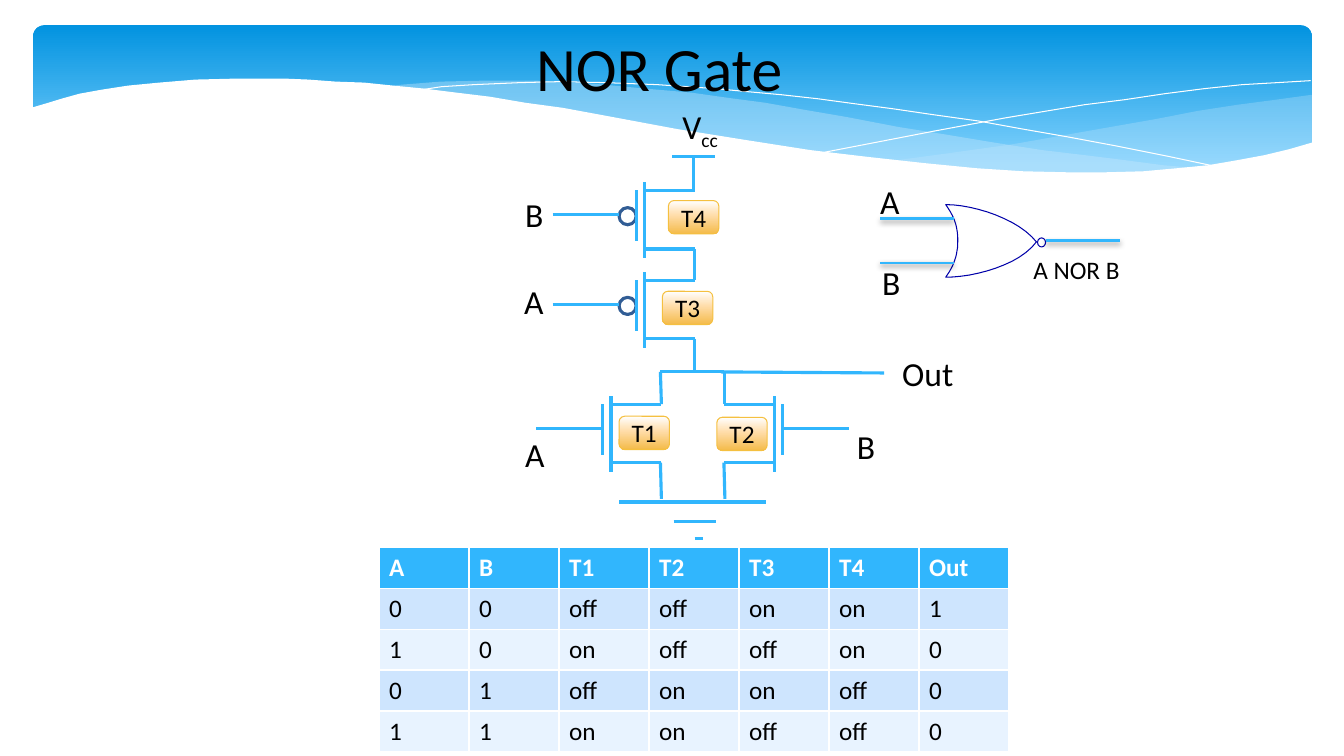
from copy import deepcopy
from itertools import product
from lxml.etree import SubElement
from pptx import Presentation
from pptx.dml.color import RGBColor
from pptx.enum.shapes import MSO_CONNECTOR, MSO_SHAPE
from pptx.enum.text import MSO_ANCHOR, MSO_AUTO_SIZE, PP_ALIGN
from pptx.oxml.ns import qn
from pptx.util import Inches, Pt

G = Inches(0.01)
C = {k: RGBColor.from_string(v) for k, v in {
    "ink": "000000", "white": "FFFFFF", "wire": "31B6FD", "bubble": "315D95",
    "gate": "0000A9", "sky": "0293E0", "pale": "83D3FE", "wave": "C6E7FC",
    "peach": "FFDDAA", "amber": "F4BB4A", "edge": "F5C040",
    "odd": "CEE5FE", "even": "E8F3FF"}.items()}


def text(tf, txt, size=24, color="ink", bold=False, align=PP_ALIGN.LEFT, sub=""):
    p = tf.paragraphs[0]
    p.alignment = align
    for part in filter(None, (txt, sub)):
        r = p.add_run()
        r.text = part
        r.font.name = "Calibri"
        r.font.size = Pt(size)
        r.font.bold = bold
        r.font.color.rgb = C[color]
    if sub:
        r._r.get_or_add_rPr().set("baseline", "-25000")


def gradient(sp, stops):
    sp.shadow.inherit = False
    sp.fill.gradient()
    sp.fill.gradient_angle = 270
    gs = sp._element.spPr.find(".//" + qn("a:gsLst"))
    for _ in stops[2:]:
        gs.append(deepcopy(gs[0]))
    for stop, (pos, color) in zip(sp.fill.gradient_stops, stops):
        stop.position = pos
        stop.color.rgb = C[color]


prs = Presentation()
prs.slide_width, prs.slide_height = 1333 * G, 750 * G
s = prs.slides.add_slide(prs.slide_layouts[6])

banner = s.shapes.add_shape(MSO_SHAPE.ROUNDED_RECTANGLE, 33 * G, 25 * G, 1268 * G, 156 * G)
banner.adjustments[0] = 0.07
banner.line.fill.background()
gradient(banner, [(0, "sky"), (0.9, "pale")])

right_wave = [
    (1301, 94), (1265, 99), (1227, 104), (1188, 110), (1147, 118), (1073, 131),
    (1005, 143), (941, 152), (882, 160), (921, 164), (958, 167), (993, 169),
    (1025, 171), (1056, 172), (1099, 172), (1138, 170), (1174, 167),
    (1207, 163), (1238, 158), (1266, 152), (1301, 142)]
middle_wave = [
    (1190, 167), (1154, 164), (1116, 159), (1076, 154), (1034, 149), (989, 142),
    (941, 134), (891, 126), (839, 116), (798, 109), (759, 102), (721, 97),
    (686, 92), (652, 89), (619, 86), (589, 83), (560, 82), (532, 80), (482, 80),
    (437, 81), (399, 84), (382, 86), (431, 90), (483, 97), (539, 106),
    (599, 116), (654, 126), (706, 135), (755, 143), (802, 150), (846, 156),
    (887, 161), (926, 165), (963, 168), (998, 170), (1030, 172), (1061, 173),
    (1104, 173), (1143, 171), (1167, 169)]
long_crest = [
    (412, 90), (438, 86), (470, 84), (516, 82), (555, 81), (600, 82), (652, 84),
    (710, 88), (742, 91), (775, 94), (811, 98), (848, 103), (886, 108),
    (927, 114), (970, 120), (1014, 128), (1060, 136), (1108, 145), (1158, 155),
    (1210, 166)]
short_crest = [
    (818, 151), (870, 141), (927, 130), (997, 117), (1075, 104), (1115, 99),
    (1155, 93), (1194, 88), (1232, 84), (1267, 82), (1300, 80)]
front_wave = [
    (1303, 141), (1279, 148), (1254, 154), (1227, 159), (1198, 164), (1167, 167),
    (1134, 170), (1097, 171), (1058, 171), (1015, 170), (969, 167), (918, 162),
    (863, 156), (804, 149), (740, 139), (671, 128), (596, 114), (558, 107),
    (521, 102), (486, 96), (453, 92), (421, 88), (390, 85), (361, 82), (333, 81),
    (306, 79), (282, 78), (235, 78), (194, 79), (158, 82), (127, 85), (101, 89),
    (79, 93), (61, 98), (48, 102), (31, 107), (31, 224), (1303, 224)]
gate = []
for a, b, c, d in [((938, 203), (948, 217), (950, 227), (950, 239)),
                   ((950, 239), (950, 253), (946, 264), (938, 275)),
                   ((938, 275), (967, 275), (1011, 263), (1028, 240)),
                   ((1028, 240), (1011, 218), (967, 203), (938, 203))]:
    for t in (i / 12 for i in range(12)):
        gate.append([(1 - t) ** 3 * a[k] + 3 * (1 - t) ** 2 * t * b[k]
                     + 3 * (1 - t) * t * t * c[k] + t ** 3 * d[k] for k in (0, 1)])

for pts, fill, opacity, line in [
        (right_wave, "wave", 29, None), (middle_wave, "wave", 40, None),
        (long_crest, None, 0, "white"), (short_crest, None, 0, "white"),
        (front_wave, "white", 100, None), (gate, None, 0, "gate")]:
    pts = [(10 * x, 10 * y) for x, y in pts]
    fb = s.shapes.build_freeform(*pts[0], scale=G / 10)
    fb.add_line_segments(pts[1:], close=line != "white")
    sp = fb.convert_to_shape()
    sp.shadow.inherit = False
    if fill:
        sp.fill.solid()
        sp.fill.fore_color.rgb = C[fill]
        clr = sp._element.spPr.find(".//" + qn("a:srgbClr"))
        SubElement(clr, qn("a:alpha")).set("val", str(opacity * 1000))
        sp.line.fill.background()
    else:
        sp.fill.background()
        sp.line.color.rgb = C[line]
        sp.line.width = Pt(0)

wires = [
    (667, 155, 709, 155), (688, 155, 688, 189), (689, 247, 689, 278),
    (689, 336, 689, 369), (655, 369, 718, 369), (715, 369, 877, 370),
    (655, 369, 656, 401), (719, 369, 719, 401), (655, 459, 656, 495),
    (718, 459, 719, 495), (614, 498, 760, 498), (668, 517, 710, 517),
    (689, 534, 697, 534)]
bubbles = [(1029, 236, 8, 9, "gate", 0)]
badges = []
for name, x, y, side, bubble, bx, by in [
        ("T4", 639, 181, 1, 17, 663, 199), ("T3", 639, 270, 1, 17, 657, 289),
        ("T1", 606, 393, 1, 0, 614, 413), ("T2", 768, 393, -1, 0, 711, 414)]:
    plate = x - 8 * side
    lead = plate - bubble * side
    wires += [(plate, y + 8, plate, y + 58), (x, y, x, y + 75),
              (lead - 66 * side, y + 32, lead, y + 32)]
    wires += [(x, y + dy, x + 50 * side, y + dy) for dy in (8, 66)]
    badges.append((name, bx, by))
    if bubble:
        bubbles.append((lead, y + 25, bubble, bubble, "bubble", 2.25))

for x, y, w, h, color, width in bubbles:
    sp = s.shapes.add_shape(MSO_SHAPE.OVAL, x * G, y * G, w * G, h * G)
    sp.shadow.inherit = False
    sp.fill.solid()
    sp.fill.fore_color.rgb = C["white"]
    sp.line.color.rgb = C[color]
    sp.line.width = Pt(width)

gate_wires = [(873, 217, 946, 217), (873, 261, 946, 261), (1037, 239, 1111, 239)]
for ends in wires + gate_wires:
    cn = s.shapes.add_connector(MSO_CONNECTOR.STRAIGHT, *(v * G for v in ends))
    cn.line.color.rgb = C["wire"]
    cn.line.width = Pt(2 if ends in gate_wires else 2.25)
    effects = SubElement(cn._element.spPr, qn("a:effectLst"))
    if ends in gate_wires:
        shadow = SubElement(effects, qn("a:outerShdw"), blurRad=str(Pt(4)),
                            dist=str(Pt(2)), dir="5400000", rotWithShape="0")
        clr = SubElement(shadow, qn("a:srgbClr"), val="000000")
        SubElement(clr, qn("a:alpha"), val="38000")

for name, x, y in badges:
    sp = s.shapes.add_shape(MSO_SHAPE.ROUNDED_RECTANGLE, x * G, y * G, 50 * G, 33 * G)
    gradient(sp, [(0, "white"), (0.44, "peach"), (1, "amber")])
    sp.line.color.rgb = C["edge"]
    sp.line.width = Pt(0.75)
    sp.text_frame.vertical_anchor = MSO_ANCHOR.MIDDLE
    text(sp.text_frame, name, size=18, align=PP_ALIGN.CENTER)

for txt, x, y, w, h, fmt in [
        ("NOR Gate", 183, 25, 942, 84, {"size": 44, "align": PP_ALIGN.CENTER}),
        ("V", 667, 100, 58, 50, {"sub": "cc"}),
        ("B", 511, 187, 41, 50, {}), ("A", 510, 274, 41, 50, {}),
        ("A", 511, 426, 41, 50, {}), ("B", 840, 418, 41, 50, {}),
        ("Out", 885, 345, 74, 50, {}),
        ("A", 863, 175, 41, 50, {}), ("B", 865, 255, 41, 50, {}),
        ("A NOR B", 1015, 247, 111, 40, {"size": 18})]:
    tf = s.shapes.add_textbox(x * G, y * G, w * G, h * G).text_frame
    tf.word_wrap = txt == "NOR Gate"
    tf.auto_size = MSO_AUTO_SIZE.SHAPE_TO_FIT_TEXT
    text(tf, txt, **fmt)

rows = [["A", "B", "T1", "T2", "T3", "T4", "Out"]]
for b, a in product((0, 1), repeat=2):
    switches = ["on" if v else "off" for v in (a, b, not a, not b)]
    rows.append([str(a), str(b), *switches, str(int(not (a or b)))])
table = s.shapes.add_table(5, 7, 376 * G, 543 * G, 625 * G, 203 * G).table
for i, j in product(range(5), range(7)):
    cell = table.cell(i, j)
    cell.fill.solid()
    cell.fill.fore_color.rgb = C["wire" if i == 0 else "odd" if i % 2 else "even"]
    text(cell.text_frame, rows[i][j], size=18, bold=i == 0, color="ink" if i else "white")

prs.save("out.pptx")
